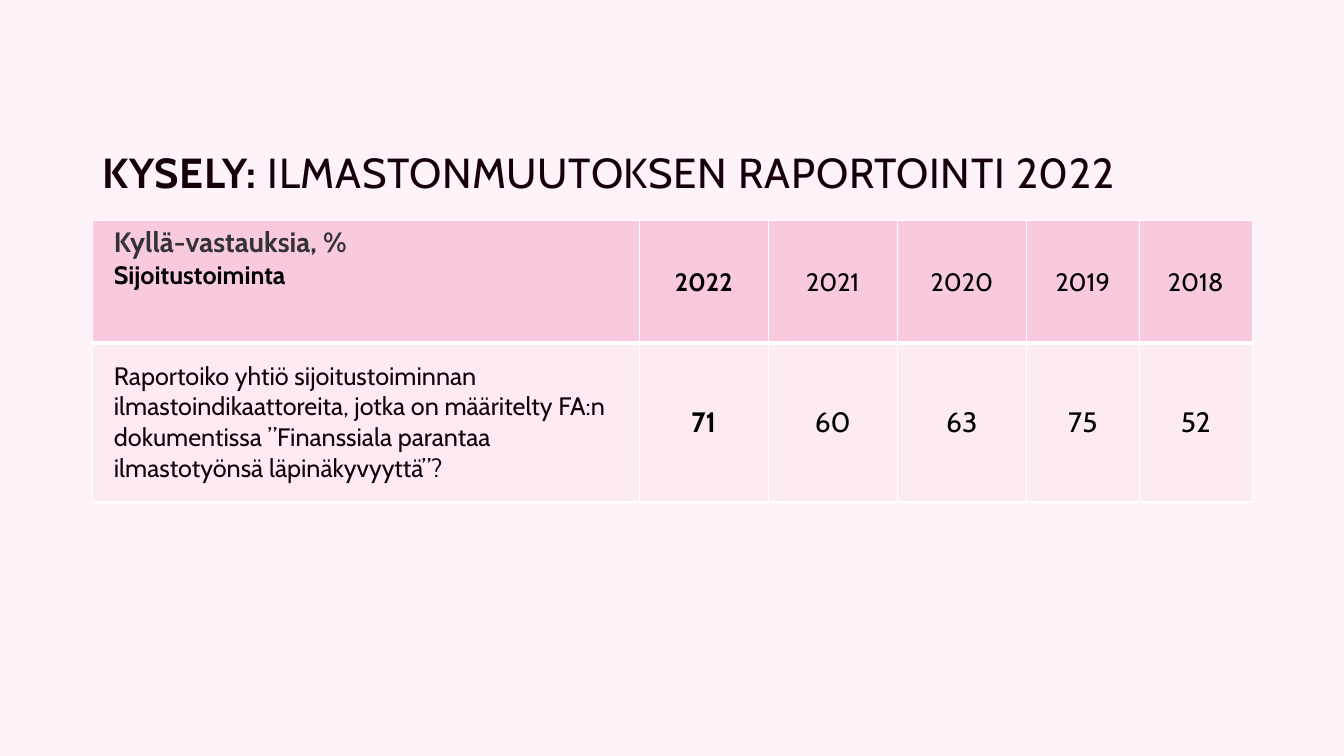
from pptx import Presentation
from pptx import util as u
from pptx.dml.color import RGBColor
from pptx.enum import text as t
from pptx.oxml import parse_xml
from pptx.oxml.ns import nsdecls

FONT = "Cabin"
INK = "17000D"
BLACK = "000000"
WIDTHS = [5.42, 1.28, 1.28, 1.28, 1.12, 1.12]
HEIGHTS = [1.21, 1.58]
FILLS = ["F8C9DF", "FCEBF3"]
SIZES = [18, 20]
YEARS = ["2022", "2021", "2020", "2019", "2018"]
SHARES = ["71", "60", "63", "75", "52"]
QUERY = ("Raportoiko yhtiö sijoitustoiminnan ilmastoindikaattoreita, "
         "jotka on määritelty FA:n dokumentissa ”Finanssiala parantaa "
         "ilmastotyönsä läpinäkyvyyttä”?")


def color(code):
    """Turn a hex string into a colour."""
    return RGBColor.from_string(code)


def style(font, size, code, bold=False):
    """Set size, colour and weight of a font."""
    font.name = FONT
    font.size = u.Pt(size)
    font.color.rgb = color(code)
    font.bold = bold


def add_title(slide, left, top, width, height):
    """Place the title with its bold lead word."""
    frame = slide.shapes.add_textbox(*map(u.Inches, (left, top, width, height))).text_frame
    frame.word_wrap = True
    frame.vertical_anchor = t.MSO_ANCHOR.MIDDLE
    para = frame.paragraphs[0]
    para.line_spacing = 0.9
    for words, bold in (("KYSELY:", True), ("\u00a0ILMASTONMUUTOKSEN RAPORTOINTI 2022", False)):
        run = para.add_run()
        run.text = words
        style(run.font, 30, INK, bold)
        run._r.get_or_add_rPr().set("spc", "50")


def dress(cell, row, pads):
    """Give a cell its borders, fill and margins."""
    props = cell._tc.get_or_add_tcPr()
    heavy = "B" if row == 0 else "T"
    for side in "LRTB":
        width = u.Pt(3 if side == heavy else 1)
        props.append(parse_xml(
            f'<a:ln{side} {nsdecls("a")} w="{width}"><a:solidFill>'
            f'<a:srgbClr val="FFFFFF"/></a:solidFill></a:ln{side}>'))
    cell.fill.solid()
    cell.fill.fore_color.rgb = color(FILLS[row])
    cell.margin_left, cell.margin_top, cell.margin_right, cell.margin_bottom = map(u.Inches, pads)


def add_label(cell, row):
    """Write the first cell of a row."""
    dress(cell, row, (0.21, 0.05, 0.21, 0.05) if row == 0 else (0.21, 0.03, 0.21, 0.03))
    para = cell.text_frame.paragraphs[0]
    if row == 0:
        head = para.add_run()
        head.text = "Kyllä-vastauksia, %"
        style(head.font, 20, "333333", True)
        para.add_line_break()
        sub = para.add_run()
        sub.text = "Sijoitustoiminta"
        style(sub.font, 18, BLACK, True)
    else:
        cell.vertical_anchor = t.MSO_ANCHOR.MIDDLE
        para.text = QUERY
        style(para.font, 18, INK)


def add_survey(slide, left, top):
    """Place the table of yes answers by year."""
    box = map(u.Inches, (left, top, sum(WIDTHS), sum(HEIGHTS)))
    table = slide.shapes.add_table(len(HEIGHTS), len(WIDTHS), *box).table
    table.first_row = table.horz_banding = False
    for col, width in zip(table.columns, WIDTHS):
        col.width = u.Inches(width)
    for row, (height, values) in enumerate(zip(HEIGHTS, (YEARS, SHARES))):
        table.rows[row].height = u.Inches(height)
        add_label(table.cell(row, 0), row)
        for col, value in enumerate(values, 1):
            cell = table.cell(row, col)
            dress(cell, row, (0.01, 0.01, 0.01, 0))
            cell.vertical_anchor = t.MSO_ANCHOR.MIDDLE
            para = cell.text_frame.paragraphs[0]
            para.text = value
            para.alignment = t.PP_ALIGN.CENTER
            style(para.font, SIZES[row], BLACK, col == 1)


def main():
    """Build and save the slide."""
    deck = Presentation()
    deck.slide_width, deck.slide_height = u.Inches(13.33), u.Inches(7.5)
    slide = deck.slides.add_slide(deck.slide_layouts[6])
    slide.background.fill.solid()
    slide.background.fill.fore_color.rgb = color("FEF3F9")
    add_title(slide, 0.92, 1.01, 11.5, 1.45)
    add_survey(slide, 0.92, 2.19)
    deck.save("out.pptx")


if __name__ == "__main__":
    main()
